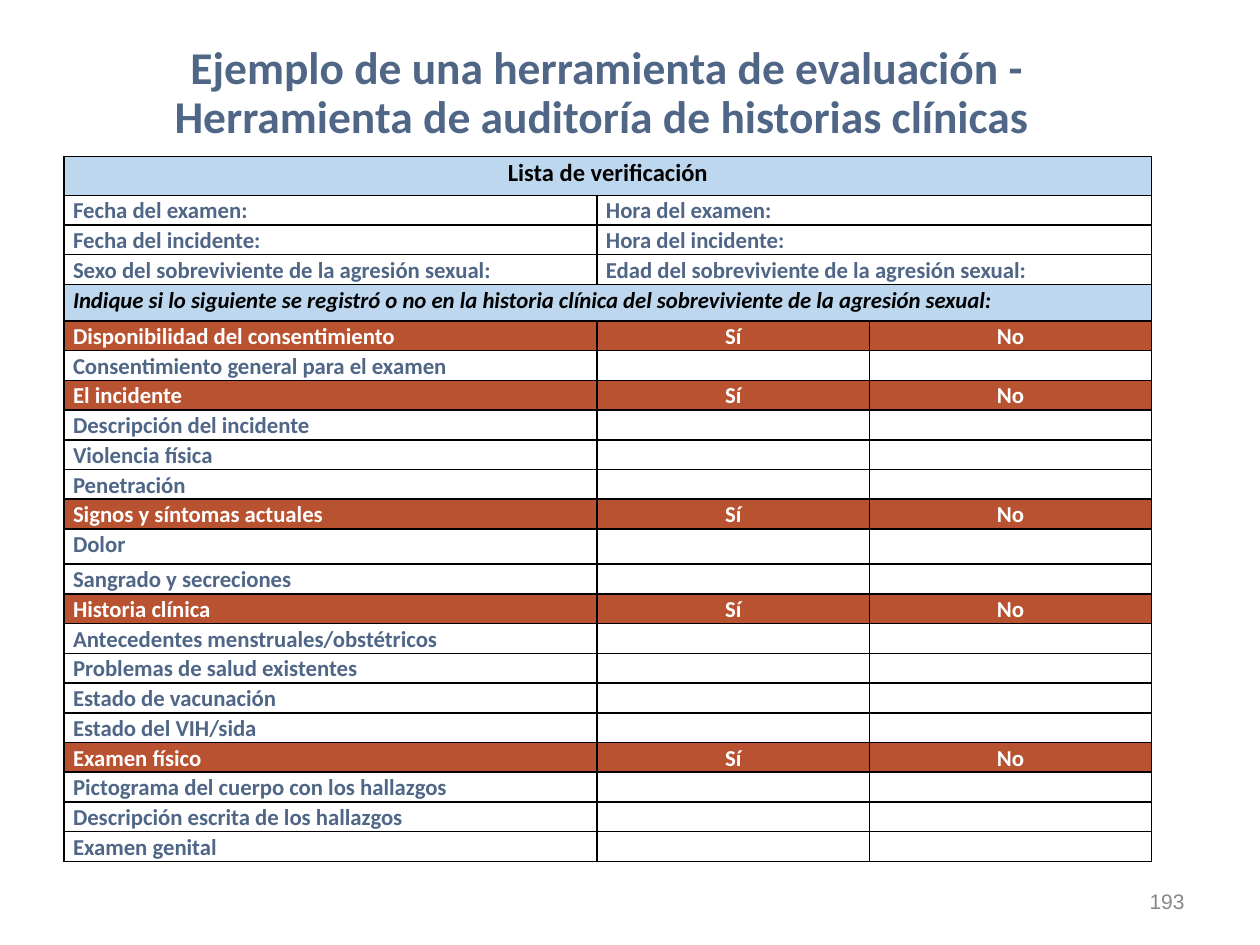
from dataclasses import dataclass

from lxml import etree
from pptx import Presentation
from pptx.dml.color import RGBColor
from pptx.enum.text import MSO_ANCHOR, MSO_AUTO_SIZE, PP_ALIGN
from pptx.oxml.ns import qn
from pptx.util import Inches, Pt

LEFT, CENTER, RIGHT = PP_ALIGN.LEFT, PP_ALIGN.CENTER, PP_ALIGN.RIGHT
MIDDLE = MSO_ANCHOR.MIDDLE
NO_AUTOFIT = MSO_AUTO_SIZE.NONE

COLORS = {
    "slate": "506687",
    "black": "000000",
    "white": "FFFFFF",
    "blue": "BDD7EE",
    "rust": "B85231",
    "gray": "888888",
}
COLUMN_WIDTHS = (4.23, 2.16, 2.24)
ROW_HEIGHT = 0.23
LINE_SPACING = 1.07


@dataclass(frozen=True)
class RowStyle:
    fill: str
    color: str
    size: int = 13
    italic: bool = False
    first_align: PP_ALIGN = LEFT
    other_align: PP_ALIGN = LEFT


@dataclass(frozen=True)
class Row:
    """A table row; its last text spans the columns left over."""
    texts: tuple[str, ...]
    style: RowStyle
    height: float = ROW_HEIGHT


HEADING = RowStyle("blue", "black", size=14, first_align=CENTER)
INSTRUCTION = RowStyle("blue", "black", italic=True)
SECTION = RowStyle("rust", "white", other_align=CENTER)
ENTRY = RowStyle("white", "slate")

DETAILS = (
    ("Fecha del examen:", "Hora del examen:"),
    ("Fecha del incidente:", "Hora del incidente:"),
    ("Sexo del sobreviviente de la agresión sexual:",
     "Edad del sobreviviente de la agresión sexual:"),
)
SECTIONS = {
    "Disponibilidad del consentimiento": ("Consentimiento general para el examen",),
    "El incidente": ("Descripción del incidente", "Violencia física", "Penetración"),
    "Signos y síntomas actuales": ("Dolor", "Sangrado y secreciones"),
    "Historia clínica": (
        "Antecedentes menstruales/obstétricos", "Problemas de salud existentes",
        "Estado de vacunación", "Estado del VIH/sida",
    ),
    "Examen físico": (
        "Pictograma del cuerpo con los hallazgos",
        "Descripción escrita de los hallazgos", "Examen genital",
    ),
}
TALL_ENTRIES = {"Dolor": 0.28}


def checklist_rows() -> list[Row]:
    rows = [Row(("Lista de verificación",), HEADING, 0.31)]
    rows += [Row(texts, ENTRY) for texts in DETAILS]
    rows.append(Row(
        ("Indique si lo siguiente se registró o no en la historia clínica "
         "del sobreviviente de la agresión sexual:",), INSTRUCTION, 0.29))
    for section, entries in SECTIONS.items():
        rows.append(Row((section, "Sí", "No"), SECTION))
        rows += [Row((entry, "", ""), ENTRY, TALL_ENTRIES.get(entry, ROW_HEIGHT))
                 for entry in entries]
    return rows


def set_attributes(target, values: dict) -> None:
    for name, value in values.items():
        setattr(target, name, value)


def write_text(paragraph, text: str, color: str, align: PP_ALIGN, **font_values) -> None:
    paragraph.alignment = align
    run = paragraph.add_run()
    run.text = text
    set_attributes(run.font, font_values)
    run.font.color.rgb = RGBColor.from_string(COLORS[color])


def add_borders(cell) -> None:
    properties = cell._tc.get_or_add_tcPr()
    for side in ("lnL", "lnR", "lnT", "lnB"):
        line = etree.SubElement(properties, qn(f"a:{side}"), w=str(Pt(1)))
        fill = etree.SubElement(line, qn("a:solidFill"))
        etree.SubElement(fill, qn("a:srgbClr"), val=COLORS["black"])


def format_cell(cell, style: RowStyle) -> None:
    set_attributes(cell, {
        "margin_left": Inches(0.07), "margin_right": Inches(0.07),
        "margin_top": 0, "margin_bottom": 0,
    })
    add_borders(cell)
    cell.fill.solid()
    cell.fill.fore_color.rgb = RGBColor.from_string(COLORS[style.fill])


def fill_row(table, index: int, row: Row) -> None:
    table.rows[index].height = Inches(row.height)
    style = row.style
    last_column = len(COLUMN_WIDTHS) - 1
    for column in range(last_column + 1):
        format_cell(table.cell(index, column), style)
    last_text = len(row.texts) - 1
    if last_text < last_column:
        table.cell(index, last_text).merge(table.cell(index, last_column))
    for column, text in enumerate(row.texts):
        paragraph = table.cell(index, column).text_frame.paragraphs[0]
        paragraph.line_spacing = LINE_SPACING
        if text:
            align = style.other_align if column else style.first_align
            write_text(paragraph, text, style.color, align, name="Calibri",
                       size=Pt(style.size), bold=True, italic=style.italic)
        else:
            # The end mark keeps an empty cell as low as its row.
            end_mark = etree.SubElement(paragraph._p, qn("a:endParaRPr"))
            end_mark.set("sz", str(style.size * 100))


def add_checklist(slide, rows: list[Row]) -> None:
    frame = slide.shapes.add_table(
        len(rows), len(COLUMN_WIDTHS), Inches(0.51), Inches(1.24),
        Inches(sum(COLUMN_WIDTHS)), Inches(sum(row.height for row in rows)))
    table = frame.table
    set_attributes(table, {"first_row": False, "horz_banding": False})
    for column, width in zip(table.columns, COLUMN_WIDTHS):
        column.width = Inches(width)
    for index, row in enumerate(rows):
        fill_row(table, index, row)


def add_title(slide) -> None:
    title = slide.shapes.title
    set_attributes(title, {
        "left": Inches(0.51), "top": Inches(0.33),
        "width": Inches(8.62), "height": Inches(0.84),
    })
    set_attributes(title.text_frame, {
        "word_wrap": True, "auto_size": NO_AUTOFIT, "vertical_anchor": MIDDLE,
    })
    paragraph = title.text_frame.paragraphs[0]
    paragraph.line_spacing = 0.9
    write_text(paragraph, "Ejemplo de una herramienta de evaluación - "
               "Herramienta de auditoría de historias clínicas ",
               "slate", CENTER, name="Calibri", size=Pt(26), bold=True)


def add_page_number(slide) -> None:
    box = slide.shapes.add_textbox(Inches(7.17), Inches(6.95), Inches(2.33), Inches(0.4))
    set_attributes(box.text_frame, {"word_wrap": True, "vertical_anchor": MIDDLE})
    write_text(box.text_frame.paragraphs[0], "193", "gray", RIGHT,
               name="Arial", size=Pt(12))


def main() -> None:
    presentation = Presentation()
    presentation.slide_width = Inches(10)
    presentation.slide_height = Inches(7.5)
    title_only = presentation.slide_layouts[5]
    slide = presentation.slides.add_slide(title_only)
    add_title(slide)
    add_checklist(slide, checklist_rows())
    add_page_number(slide)
    presentation.save("out.pptx")


if __name__ == "__main__":
    main()
